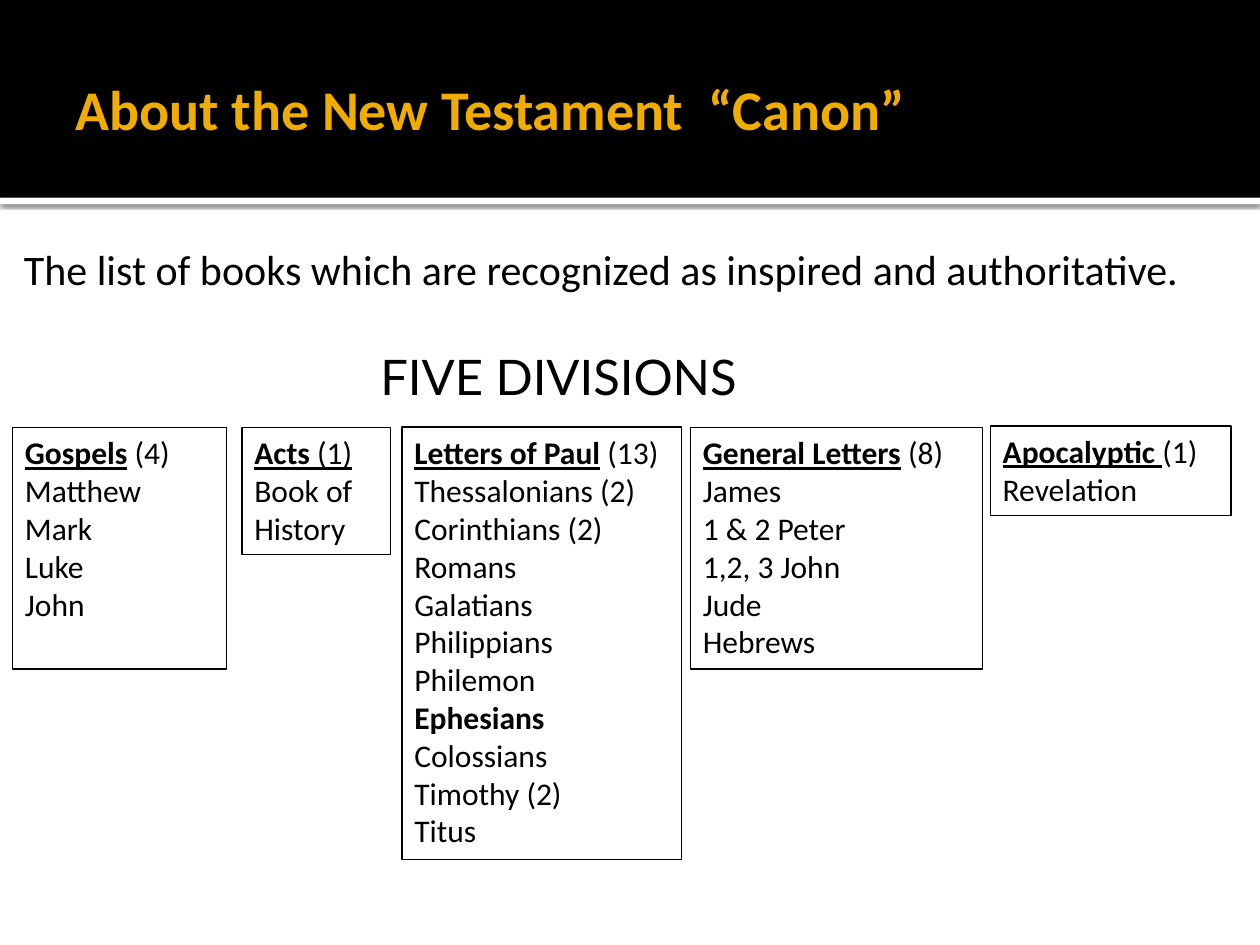
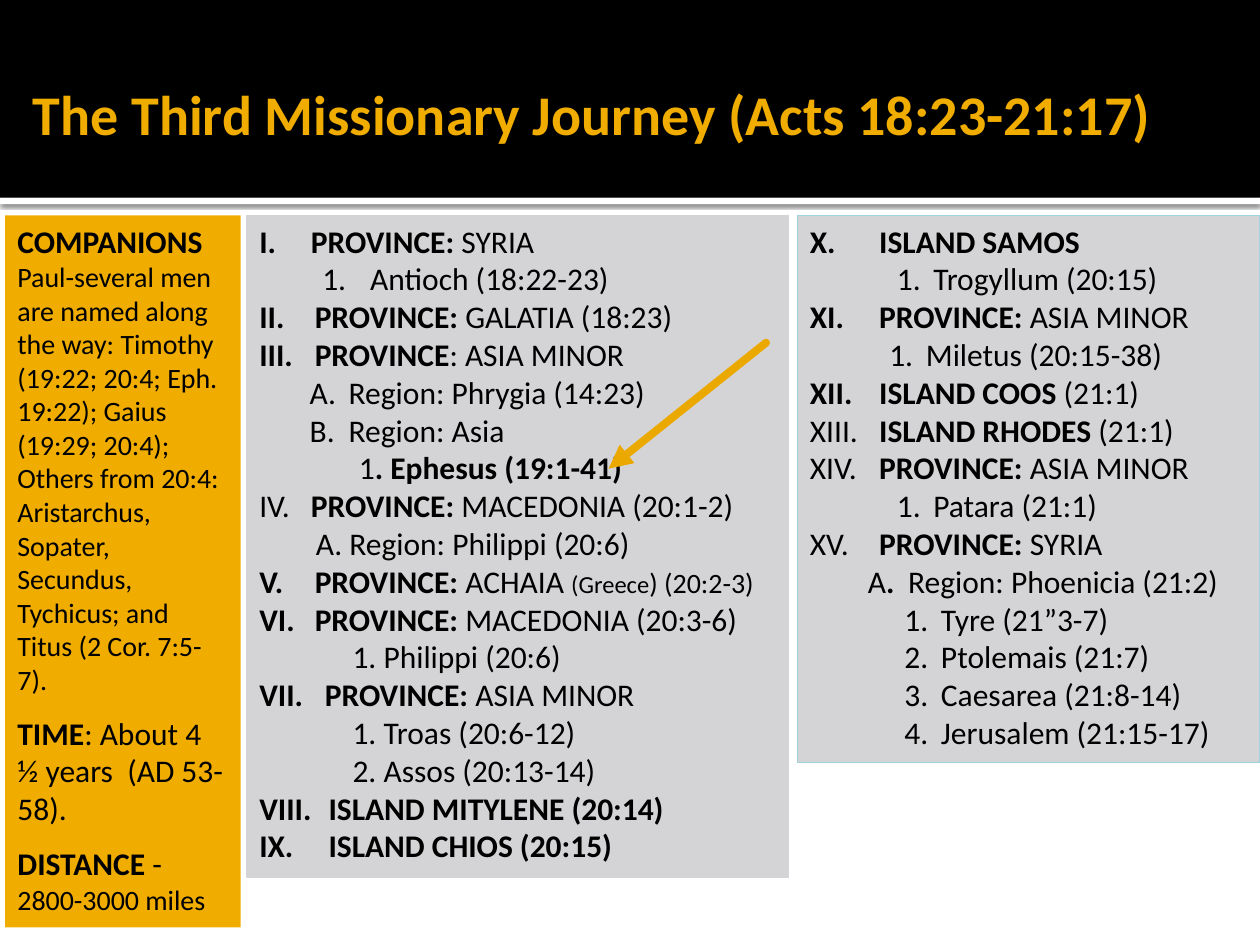
"""Build two slides on the New Testament canon and the third missionary journey."""
import lxml.etree
import pptx
import pptx.dml.color
import pptx.enum.shapes
import pptx.enum.text
import pptx.oxml
import pptx.oxml.ns
import pptx.util

Inches = pptx.util.Inches
Pt = pptx.util.Pt
qn = pptx.oxml.ns.qn
RGB = pptx.dml.color.RGBColor.from_string
RECTANGLE = pptx.enum.shapes.MSO_SHAPE.RECTANGLE
COLORS = {"black": "000000", "white": "FFFFFF", "gold": "F0AD00",
          "arrow": "EBA900", "gray": "D4D4D6", "pale blue": "A0D3E0"}
BAND_SHADOW = (
    '<a:effectLst xmlns:a="http://schemas.openxmlformats.org/drawingml/2006/main">'
    '<a:outerShdw blurRad="31750" dist="10160" dir="5400000" algn="tl" rotWithShape="0">'
    '<a:srgbClr val="000000"><a:alpha val="60000"/></a:srgbClr>'
    '</a:outerShdw></a:effectLst>')


def add_panel(slide, bounds, fill=None, line=None):
    """Add a rectangle with left-aligned, top-anchored text."""
    panel = slide.shapes.add_shape(RECTANGLE, *map(Inches, bounds))
    panel.shadow.inherit = False
    if fill:
        panel.fill.solid()
        panel.fill.fore_color.rgb = RGB(COLORS[fill])
    else:
        panel.fill.background()
    if line:
        panel.line.color.rgb = RGB(COLORS[line])
        panel.line.width = Pt(0.75)
    else:
        panel.line.fill.background()
    panel.text_frame.word_wrap = True
    panel.text_frame.vertical_anchor = pptx.enum.text.MSO_ANCHOR.TOP
    return panel


def write_lines(frame, lines, size=18, font="Calibri", color="black"):
    """Write one paragraph per line; asterisks switch bold on and off."""
    for number, line in enumerate(lines):
        paragraph = frame.add_paragraph() if number else frame.paragraphs[0]
        paragraph.alignment = pptx.enum.text.PP_ALIGN.LEFT
        for position, words in enumerate(line.split("*")):
            if words:
                run = paragraph.add_run()
                run.text = words
                run.font.name = font
                run.font.size = Pt(size)
                run.font.bold = position % 2 == 1
                run.font.color.rgb = RGB(COLORS[color])


prs = pptx.Presentation()
prs.slide_width, prs.slide_height = Inches(10), Inches(7.5)

titles = [
    ("About the New Testament  “Canon”", (0.5, 0.17, 9, 1.37)),
    ("The Third Missionary Journey (Acts 18:23-21:17)", (0.16, 0.02, 9.68, 1.76)),
]
for heading, bounds in titles:
    slide = prs.slides.add_slide(prs.slide_layouts[5])
    stripe = add_panel(slide, (0, 1.57, 10, 0.05), "white")
    shape_properties = stripe.element.spPr
    shape_properties.remove(shape_properties.find(qn("a:effectLst")))
    shape_properties.append(pptx.oxml.parse_xml(BAND_SHADOW))
    header = add_panel(slide, (0, 0, 10, 1.57), "black")
    title = slide.shapes.title
    header.element.addnext(title.element)
    title.left, title.top, title.width, title.height = map(Inches, bounds)
    frame = title.text_frame
    frame.auto_size = pptx.enum.text.MSO_AUTO_SIZE.NONE
    frame.word_wrap = True
    frame.vertical_anchor = pptx.enum.text.MSO_ANCHOR.MIDDLE
    frame.margin_left, frame.margin_right = Inches(0.1), Inches(0.05)
    write_lines(frame, [f"*{heading}*"], 32, color="gold")

canon, journey = prs.slides

definition = canon.shapes.add_textbox(Inches(0), Inches(1.83), Inches(10), Inches(0.8)).text_frame
definition.word_wrap = True
definition.margin_left, definition.margin_top = Inches(0.19), Inches(0.1)
write_lines(definition, ["The list of books which are recognized as inspired and authoritative."], 24)

divisions = [
    ((0.1, 3.39, 1.7, 1.92), ["*Gospels* (4)", "Matthew", "Mark", "Luke", "John"]),
    ((1.92, 3.39, 1.18, 1.01), ["*Acts *(1)", "Book of History"]),
    ((3.19, 3.39, 2.22, 3.43),
     ["*Letters of Paul* (13)", "Thessalonians (2)", "Corinthians (2)", "Romans", "Galatians",
      "Philippians", "Philemon", "*Ephesians*", "Colossians", "Timothy (2)", "Titus"]),
    ((5.48, 3.39, 2.32, 1.92),
     ["*General Letters* (8)", "James", "1 & 2 Peter", "1,2, 3 John", "Jude", "Hebrews"]),
    ((7.86, 3.38, 1.91, 0.71), ["*Apocalyptic *(1)", "Revelation"]),
]
for bounds, books in divisions:
    frame = add_panel(canon, bounds, line="black").text_frame
    write_lines(frame, books)
    name, count = frame.paragraphs[0].runs
    name.font.underline = True
    count.font.underline = books[0].startswith("*Acts")

divisions_label = canon.shapes.add_textbox(Inches(2.92), Inches(2.7), Inches(3.09), Inches(0.57))
divisions_label.text_frame.word_wrap = False
write_lines(divisions_label.text_frame, ["FIVE DIVISIONS"], 28, "Lato")

facts = add_panel(journey, (0.04, 1.71, 1.87, 5.65), "gold").text_frame
write_lines(facts, [
    "*COMPANIONS *Paul-several men are named along the way: Timothy (19:22; 20:4; Eph. 19:22); "
    "Gaius (19:29; 20:4); Others from 20:4: Aristarchus, Sopater, Secundus, Tychicus; "
    "and Titus (2 Cor. 7:5-7).",
    "*TIME*: About 4 ½ years  (AD 53-58).",
    "*DISTANCE* -  **2800-3000 miles",
])
companions, duration, distance = facts.paragraphs
companions.runs[-1].font.size = distance.runs[-1].font.size = Pt(16)
duration.space_before = distance.space_before = Pt(10)

late_stops = [
    (0.55, 0.55, None, "*X.\tISLAND SAMOS*"),
    (0.98, 0.29, None, "1.\tTrogyllum (20:15)"),
    (0.55, 0.55, ("romanUcPeriod", 11), "*PROVINCE: *ASIA MINOR"),
    (0.92, 0.29, None, "1.\tMiletus (20:15-38)"),
    (0.55, 0.55, ("romanUcPeriod", 12), "*ISLAND COOS *(21:1)"),
    (0.55, 0.55, None, "XIII.\t*ISLAND RHODES *(21:1)"),
    (0.55, 0.55, None, "XIV.\t*PROVINCE: *ASIA MINOR"),
    (0.98, 0.29, None, "1.\tPatara (21:1)"),
    (0.55, 0.55, None, "XV.\t*PROVINCE: *SYRIA"),
    (0.78, 0.32, None, "A*.\t*Region: Phoenicia (21:2)"),
    (1.04, 0.29, None, "1.\tTyre (21”3-7)"),
    (1.04, 0.29, None, "2.\tPtolemais (21:7)"),
    (1.04, 0.29, None, "3.\tCaesarea (21:8-14)"),
    (1.04, 0.29, None, "4.\tJerusalem (21:15-17)"),
]
early_stops = [
    (0.41, 0.41, None, "*I.\tPROVINCE: *SYRIA"),
    (0.88, 0.38, ("arabicPeriod", 1), "Antioch (18:22-23)"),
    (0.44, 0.44, ("romanUcPeriod", 2), "*PROVINCE: *GALATIA (18:23)"),
    (0.44, 0.44, ("romanUcPeriod", 2), "*PROVINCE*: ASIA MINOR"),
    (0.71, 0.31, None, "A.\tRegion: Phrygia (14:23)"),
    (0.71, 0.31, None, "B.\tRegion: Asia"),
    (0.79, 0, None, "1*. Ephesus (19:1-41)*"),
    (0.41, 0.41, None, "IV.\t*PROVINCE: *MACEDONIA (20:1-2)"),
    (0.45, 0, None, "A. Region: Philippi (20:6)"),
    (0.44, 0.44, ("romanUcPeriod", 5), "*PROVINCE: *ACHAIA **(Greece**) (20:2-3)"),
    (0.44, 0.44, ("romanUcPeriod", 5), "*PROVINCE:* MACEDONIA (20:3-6)"),
    (0.74, 0, None, "1. Philippi (20:6)"),
    (0.52, 0.52, None, "*VII.\tPROVINCE: *ASIA MINOR"),
    (0.74, 0, None, "1. Troas (20:6-12)"),
    (0.74, 0, None, "2. Assos (20:13-14)"),
    (0.55, 0.55, ("romanUcPeriod", 8), "*ISLAND MITYLENE (20:14)*"),
    (0.55, 0.55, ("romanUcPeriod", 8), "*ISLAND CHIOS (20:15)*"),
]
for bounds, line, stops in [
    ((6.33, 1.71, 3.67, 4.34), "pale blue", late_stops),
    ((1.96, 1.71, 4.3, 5.25), "gray", early_stops),
]:
    itinerary = add_panel(journey, bounds, "gray", line).text_frame
    write_lines(itinerary, [stop[-1] for stop in stops])
    for paragraph, (left, hanging, numbering, words) in zip(itinerary.paragraphs, stops):
        properties = paragraph._p.get_or_add_pPr()
        properties.set("marL", str(Inches(left)))
        properties.set("indent", str(-Inches(hanging)))
        if numbering:
            scheme, start = numbering
            lxml.etree.SubElement(properties, qn("a:buFont"), typeface="+mj-lt")
            lxml.etree.SubElement(properties, qn("a:buAutoNum"), type=scheme, startAt=str(start))
        if "ACHAIA" in words:
            greece, verses = paragraph.runs[-2:]
            greece.font.size, verses.font.size = Pt(14), Pt(16)

ephesus_arrow = journey.shapes.add_connector(
    pptx.enum.shapes.MSO_CONNECTOR.STRAIGHT,
    Inches(6.08), Inches(2.72), Inches(4.83), Inches(3.72))
ephesus_arrow.line.color.rgb = RGB(COLORS["arrow"])
ephesus_arrow.line.width = Pt(4.5)
arrow_line = ephesus_arrow.line._get_or_add_ln()
arrow_line.set("cap", "rnd")
lxml.etree.SubElement(arrow_line, qn("a:tailEnd"), type="triangle")
lxml.etree.SubElement(ephesus_arrow.element.spPr, qn("a:effectLst"))

prs.save("out.pptx")
